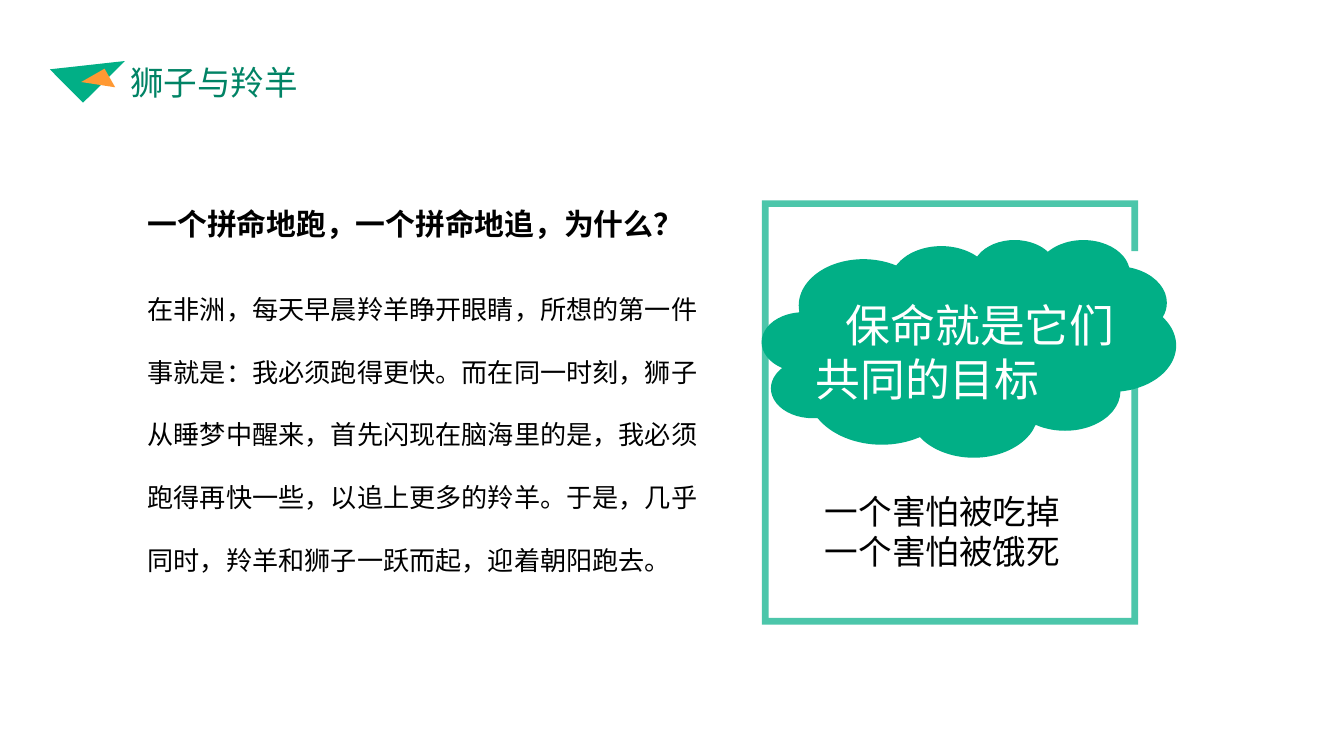
from lxml import etree
from pptx import Presentation
from pptx.dml.color import RGBColor
from pptx.enum.shapes import MSO_SHAPE
from pptx.oxml.ns import qn
from pptx.util import Pt

TRIANGLE = MSO_SHAPE.RIGHT_TRIANGLE
CLOUD = MSO_SHAPE.CLOUD
FONT = "Noto Sans CJK SC"
GREEN, DARK_GREEN, ORANGE = "01AF86", "018365", "FF9933"
BLACK, WHITE = "000000", "FFFFFF"

STORY = (
    "在非洲，每天早晨羚羊睁开眼睛，所想的第一件事就是：我必须跑得更快。"
    "而在同一时刻，狮子从睡梦中醒来，首先闪现在脑海里的是，"
    "我必须跑得再快一些，以追上更多的羚羊。"
    "于是，几乎同时，羚羊和狮子一跃而起，迎着朝阳跑去。"
)
SHAPES = [
    (TRIANGLE, (31, 22.3, 31.7, 25.2), GREEN, 315.2),
    (TRIANGLE, (45.4, 39.6, 14.4, 11.5), ORANGE, 150.2),
    (CLOUD, (408.2, 128.2, 221.8, 116.6), GREEN, 0),
]
FRAME = (408.2, 107.3, 609.8, 334.6)
FRAME_BAR = 3.6
FRAME_GAP = (134.6, 192.2)
TEXTS = [
    (["狮子与羚羊"], (62.6, 29.5, 105.1, 28.8), 18, DARK_GREEN, {"wrap": False}),
    (["一个拼命地跑，一个拼命地追，为什么？"], (72, 106.6, 311, 26.6), 16, BLACK, {"bold": True}),
    ([STORY], (72, 136.8, 316.8, 177.1), 14, BLACK, {"spacing": 2}),
    (["保命就是它们共同的目标"], (429.8, 156.2, 198, 65.5), 24, WHITE, {"indent": 16.2}),
    (["一个害怕被吃掉", "一个害怕被饿死"], (434.9, 259.2, 167.8, 51.1), 18, BLACK, {}),
]


def rgb(color):
    """Return the colour of a hex string."""
    return RGBColor.from_string(color)


def paint(sp, color):
    """Give a shape a flat fill without line or shadow."""
    sp.shadow.inherit = False
    sp.fill.solid()
    sp.fill.fore_color.rgb = rgb(color)
    sp.line.fill.background()


def add_frame(slide):
    """Draw the translucent frame that is open on its right side."""
    left, top, right, bottom = FRAME
    gap_top, gap_bottom = FRAME_GAP
    in_left, in_top = left + FRAME_BAR, top + FRAME_BAR
    in_right, in_bottom = right - FRAME_BAR, bottom - FRAME_BAR
    points = [
        (left, top), (right, top), (right, gap_top), (in_right, gap_top),
        (in_right, in_top), (in_left, in_top), (in_left, in_bottom),
        (in_right, in_bottom), (in_right, gap_bottom), (right, gap_bottom),
        (right, bottom), (left, bottom),
    ]
    start, *rest = [(Pt(x), Pt(y)) for x, y in points]
    builder = slide.shapes.build_freeform(*start)
    builder.add_line_segments(rest, close=True)
    sp = builder.convert_to_shape()
    paint(sp, GREEN)
    color = sp.fill._xPr.find(".//" + qn("a:srgbClr"))
    etree.SubElement(color, qn("a:alpha")).set("val", "70000")


def add_text(slide, lines, box, size, color, wrap=True, bold=False, spacing=None, indent=0):
    """Add a text box with one paragraph for each line."""
    tf = slide.shapes.add_textbox(*map(Pt, box)).text_frame
    tf.word_wrap = wrap
    for i, line in enumerate(lines):
        p = tf.add_paragraph() if i else tf.paragraphs[0]
        if spacing:
            p.line_spacing = spacing
        if indent:
            p._p.get_or_add_pPr().set("indent", str(Pt(indent)))
        r = p.add_run()
        r.text = line
        r.font.name = FONT
        r.font.size = Pt(size)
        r.font.bold = bold
        r.font.color.rgb = rgb(color)
        etree.SubElement(r.font._element, qn("a:ea")).set("typeface", FONT)


def main():
    """Build the slide and save it."""
    prs = Presentation()
    prs.slide_width, prs.slide_height = Pt(720), Pt(405)
    slide = prs.slides.add_slide(prs.slide_layouts[6])
    add_frame(slide)
    for kind, box, color, rotation in SHAPES:
        sp = slide.shapes.add_shape(kind, *map(Pt, box))
        sp.rotation = rotation
        paint(sp, color)
    for lines, box, size, color, style in TEXTS:
        add_text(slide, lines, box, size, color, **style)
    prs.save("out.pptx")


if __name__ == "__main__":
    main()
